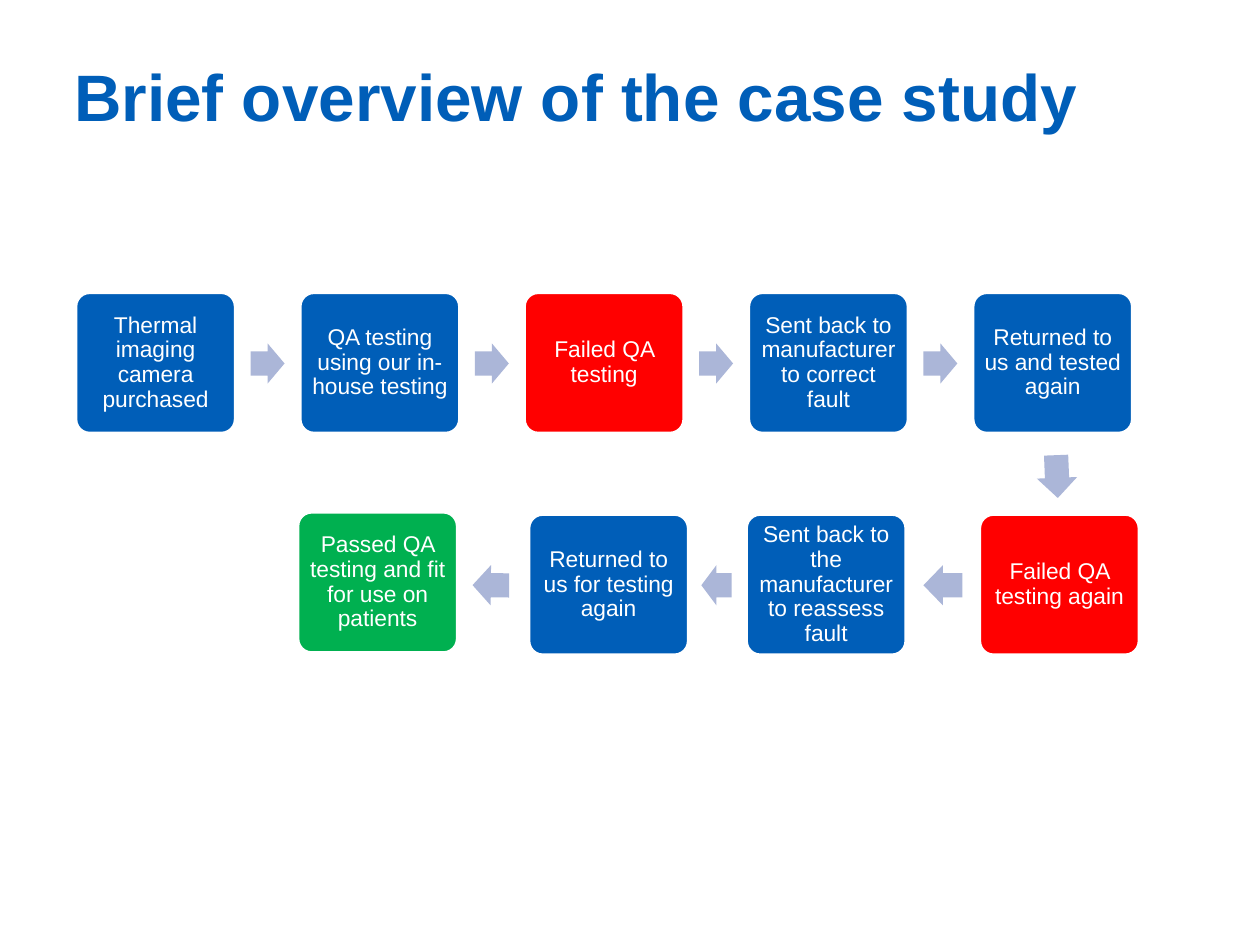
from pptx import Presentation
from pptx import util as u
from pptx.dml.color import RGBColor
from pptx.enum import shapes, text

BLUE, RED, GREEN, PALE, WHITE = "005EB8", "FF0000", "00B050", "ABB6D8", "FFFFFF"


def colour(value):
    return RGBColor.from_string(value)


def apply(target, values):
    for name, value in values.items():
        setattr(target, name, value)


class FlowSlide:
    left, top = 0.6, 2.32
    column_step, row_step = 1.78, 1.76
    box_size = 1.27, 1.12
    arrow_height = 0.32
    title_font = {"name": "Arial", "size": u.Pt(37.5), "bold": True}
    box_font = {"name": "Arial", "size": u.Pt(13), "bold": False}

    def __init__(self, presentation):
        self.slide = presentation.slides.add_slide(presentation.slide_layouts[5])

    def label(self, shape, wording, font, ink, margin, frame_format, paragraph_format):
        frame = shape.text_frame
        frame.text = wording
        margins = {f"margin_{side}": u.Inches(margin) for side in ("left", "right", "top", "bottom")}
        apply(frame, {"word_wrap": True, "auto_size": text.MSO_AUTO_SIZE.NONE, **margins, **frame_format})
        paragraph = frame.paragraphs[0]
        apply(paragraph, paragraph_format)
        apply(paragraph.font, font)
        paragraph.font.color.rgb = colour(ink)

    def title(self, wording):
        shape = self.slide.shapes.title
        apply(shape, {"left": u.Inches(0.59), "top": u.Inches(0.59),
                      "width": u.Inches(8.86), "height": u.Inches(1.02)})
        self.label(shape, wording, self.title_font, BLUE, 0,
                   {"vertical_anchor": text.MSO_ANCHOR.TOP},
                   {"alignment": text.PP_ALIGN.LEFT, "line_spacing": u.Pt(34.5), "space_before": u.Pt(0)})

    def shape(self, kind, column, row, width, height, fill, adjustments):
        shape = self.slide.shapes.add_shape(
            kind, u.Inches(self.left + column * self.column_step),
            u.Inches(self.top + row * self.row_step), u.Inches(width), u.Inches(height))
        shape.shadow.inherit = False
        shape.fill.solid()
        shape.fill.fore_color.rgb = colour(fill)
        for index, value in enumerate(adjustments):
            shape.adjustments[index] = value
        return shape

    def box(self, column, row, wording, fill=BLUE):
        shape = self.shape(shapes.MSO_SHAPE.ROUNDED_RECTANGLE, column, row, *self.box_size, fill, [0.1])
        shape.line.color.rgb = colour(WHITE)
        shape.line.width = u.Pt(2)
        self.label(shape, wording, self.box_font, WHITE, 0.05,
                   {"vertical_anchor": text.MSO_ANCHOR.MIDDLE},
                   {"alignment": text.PP_ALIGN.CENTER, "line_spacing": 0.9})

    def arrow(self, column, row, width=0.27, rotation=0):
        shape = self.shape(shapes.MSO_SHAPE.RIGHT_ARROW, column, row, width, self.arrow_height, PALE, [0.6, 0.5])
        shape.line.fill.background()
        shape.rotation = rotation


def main():
    presentation = Presentation()
    apply(presentation, {"slide_width": u.Inches(10), "slide_height": u.Inches(7.5)})
    flow = FlowSlide(presentation)
    flow.title("Brief overview of the case study")

    first_row = [
        ("Thermal imaging camera purchased", BLUE),
        ("QA testing using our in-house testing", BLUE),
        ("Failed QA testing", RED),
        ("Sent back to manufacturer to correct fault", BLUE),
        ("Returned to us and tested again", BLUE),
    ]
    for column, (wording, fill) in enumerate(first_row):
        flow.box(column, 0, wording, fill)
        if column < len(first_row) - 1:
            flow.arrow(column + 0.78, 0.23)

    flow.arrow(4.28, 0.74, 0.34, 87.7)

    second_row = [
        (4.03, 1, "Failed QA testing again", RED),
        (2.99, 1, "Sent back to the manufacturer to reassess fault", BLUE),
        (2.02, 1, "Returned to us for testing again", BLUE),
        (0.99, 0.99, "Passed QA testing and fit for use on patients", GREEN),
    ]
    for step in second_row:
        flow.box(*step)
    for column, width, rotation in [(3.78, 0.31, 180), (2.79, 0.24, 180), (1.77, 0.29, 180.5)]:
        flow.arrow(column, 1.23, width, rotation)

    presentation.save("out.pptx")


if __name__ == "__main__":
    main()
